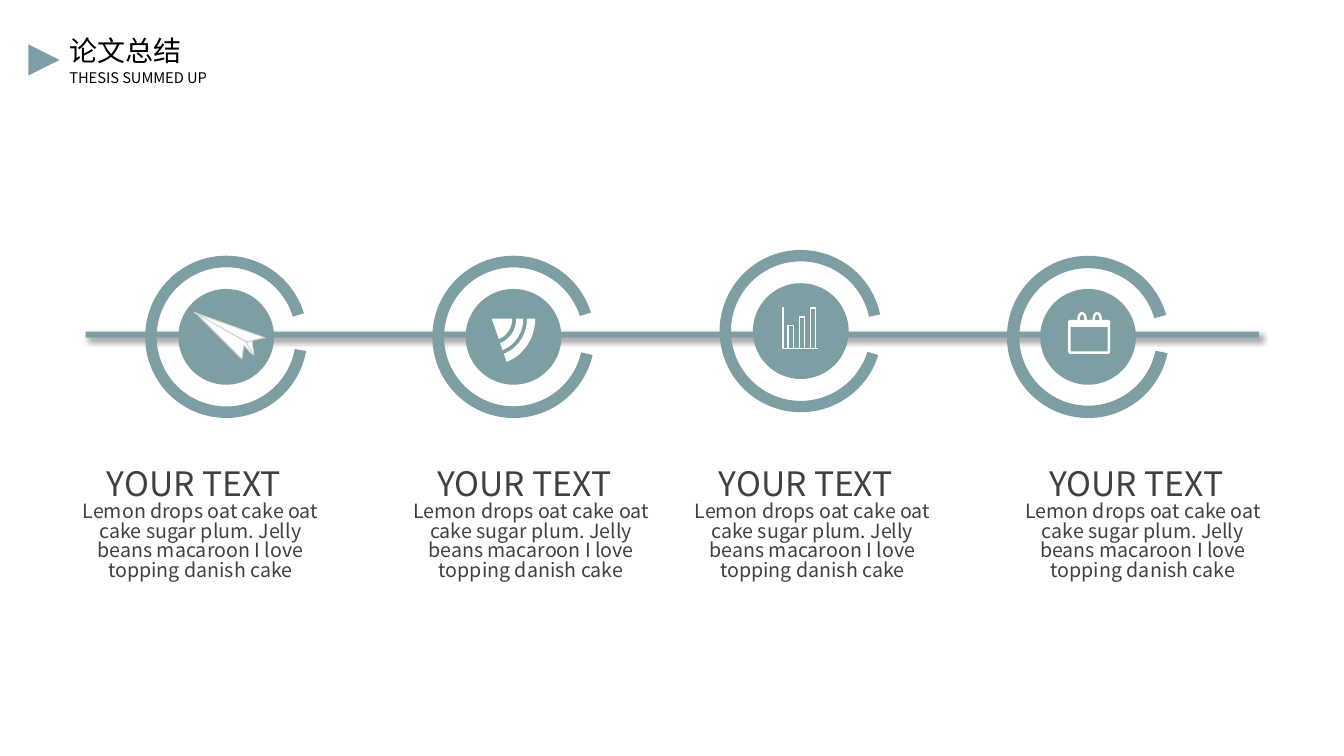
from dataclasses import dataclass
from math import cos, radians, sin

from lxml import etree
from pptx import Presentation
from pptx import util as u
from pptx.dml import color as c
from pptx.enum import shapes, text
from pptx.oxml import ns

Pt = u.Pt
FORMS = shapes.MSO_SHAPE


@dataclass
class Theme:
    font: str = "Noto Sans CJK SC"
    teal: str = "7D9EA3"
    white: str = "FFFFFF"
    pale: str = "D9D9D9"
    black: str = "000000"
    gray: str = "404040"
    title: float = 20
    sub: float = 10.5
    head: float = 24
    body: float = 14


theme = Theme()
deck = Presentation()
deck.slide_width, deck.slide_height = Pt(960), Pt(540)
slide = deck.slides.add_slide(deck.slide_layouts[6])
items = slide.shapes


def paint(shape, fill=None, line=None, width=1):
    """Set fill and outline; None leaves either one out."""
    shape.shadow.inherit = False
    if fill:
        shape.fill.solid()
        shape.fill.fore_color.rgb = c.RGBColor.from_string(fill)
    else:
        shape.fill.background()
    if line:
        shape.line.color.rgb = c.RGBColor.from_string(line)
        shape.line.width = Pt(width)
    else:
        shape.line.fill.background()
    return shape


def write(box, words, size, color, frame=None, para=None):
    """Add a text box; frame and para hold extra format values."""
    field = items.add_textbox(*map(Pt, box)).text_frame
    line = field.paragraphs[0]
    run = line.add_run()
    run.text = words
    run.font.color.rgb = c.RGBColor.from_string(color)
    jobs = [
        (field, {"word_wrap": True, **(frame or {})}),
        (line, para or {}),
        (run.font, {"name": theme.font, "size": Pt(size)}),
    ]
    for part, values in jobs:
        for name, value in values.items():
            setattr(part, name, value)
    east = etree.SubElement(run.font._element, ns.qn("a:ea"))
    east.set("typeface", theme.font)


# Heading
mark = paint(items.add_shape(FORMS.ISOSCELES_TRIANGLE, Pt(20.2), Pt(31.7), Pt(22.3), Pt(22.3)), theme.teal)
mark.rotation = 90
write((42.5, 20.2, 275.8, 36), "论文总结", theme.title, theme.black)
write((42.5, 45.4, 119.5, 20.2), "THESIS SUMMED UP", theme.sub, theme.black, {"word_wrap": False})

# Timeline bar with soft shadow
bar = paint(items.add_shape(FORMS.RECTANGLE, Pt(61.2), Pt(236.9), Pt(838.1), Pt(4.3)), theme.teal)
glow = bar._element.spPr.find(ns.qn("a:effectLst"))
cast = etree.SubElement(glow, ns.qn("a:outerShdw"), blurRad=str(Pt(4)), dist=str(Pt(3)),
                        dir="2700000", algn="tl", rotWithShape="0")
tint = etree.SubElement(cast, ns.qn("a:srgbClr"), val=theme.black)
etree.SubElement(tint, ns.qn("a:alpha"), val="40000")

# Rings and discs: centre height, turn, arc start, arc end, thickness
rings = [
    (240.6, 225.7, 86.629, 70.463, 0.071),
    (240.6, 224.9, 88.811, 70.611, 0.072),
    (236.5, 224.7, 91.492, 74.058, 0.07),
    (240.6, 222.2, 89.649, 73.242, 0.076),
]
mids = []
for col, (mid_y, turn, *arc) in enumerate(rings):
    mid_x = 161.6 + 205.2 * col
    mids.append((mid_x, mid_y))
    for form, size in ((FORMS.BLOCK_ARC, 115.9), (FORMS.OVAL, 68.4)):
        shape = paint(items.add_shape(form, Pt(mid_x - size / 2), Pt(mid_y - size / 2), Pt(size), Pt(size)), theme.teal)
        if form == FORMS.BLOCK_ARC:
            shape.rotation = turn
            for spot, value in enumerate(arc):
                shape.adjustments[spot] = value

# Icon outlines, in points from the centre of their disc
plane = [
    (-22.7, -17.3), (27.7, 0.7), (26.3, 0.7), (14.8, 3.6), (-22.7, -17.3),
    (-19.8, -15.8), (14, 3.6), (19.1, 12.2), (19.8, 13), (14, 3.6),
    (14.8, 4.3), (18.4, 2.9), (19.8, 13), (19.1, 12.2), (17.6, 11.5),
    (12.6, 5.8), (11.2, 15.8), (-22, -17.3),
]
fan = []
for near, far in ((0, 14.6), (17.5, 22.5), (25.2, 31)):
    sweep = [(far, deg) for deg in range(0, 71, 5)]
    sweep += [(near, deg) for deg in range(70, -1, -5)]
    fan.append([(-15.5 + r * cos(radians(deg)), -13 + 1.06 * r * sin(radians(deg))) for r, deg in sweep])
axes = [(-12.6, -16.9), (-12.6, 12.6), (12.6, 12.6)]
page = [(-13.3, -11.2)]
for loop in (-4.3, 6.5):
    page.append((loop - 2.5, -11.2))
    page += [(loop - 2.5 * cos(radians(deg)), -12.6 - 4.3 * sin(radians(deg))) for deg in range(0, 181, 15)]
    page.append((loop + 2.5, -11.2))
page += [(14.8, -11.2), (14.8, 11.2), (-13.3, 11.2)]

icons = [
    ([plane], True, theme.white, theme.pale, 0),
    (fan, True, theme.white, None, 0),
    ([axes], False, None, theme.white, 1),
    ([page], True, None, theme.white, 1.75),
]
for (mid_x, mid_y), (paths, closed, *style) in zip(mids, icons):
    pen = None
    for path in paths:
        dots = [(100 * (mid_x + x), 100 * (mid_y + y)) for x, y in path]
        if pen:
            pen.move_to(*dots[0])
        else:
            pen = items.build_freeform(*dots[0], scale=Pt(0.01))
        pen.add_line_segments(dots[1:], close=closed)
    paint(pen.convert_to_shape(), *style)

# Chart bars and calendar band
mid_x, mid_y = mids[2]
for step, tall in enumerate((16.5, 22.5, 28.8)):
    place = (mid_x - 9 + 7.9 * step, mid_y + 12.4 - tall, 3.6, tall)
    paint(items.add_shape(FORMS.FLOWCHART_PROCESS, *map(Pt, place)), None, theme.white)
paint(items.add_shape(FORMS.RECTANGLE, Pt(764.6), Pt(229), Pt(27.4), Pt(4.3)), theme.white, theme.white)

# Captions
bare = dict.fromkeys(("margin_left", "margin_top", "margin_right", "margin_bottom"), 0)
flow = {"alignment": text.PP_ALIGN.CENTER, "line_spacing": 0.83}
blurb = "Lemon drops oat cake oat cake sugar plum. Jelly beans macaroon I love topping danish cake"
for left in (54.7, 290.9, 491.8, 727.9):
    write((left + 9, 326.9, 157, 36), "YOUR TEXT", theme.head, theme.gray, {"margin_left": Pt(12.6)})
    write((left, 359.3, 177.1, 77), blurb, theme.body, theme.gray, bare, flow)

deck.save("out.pptx")
